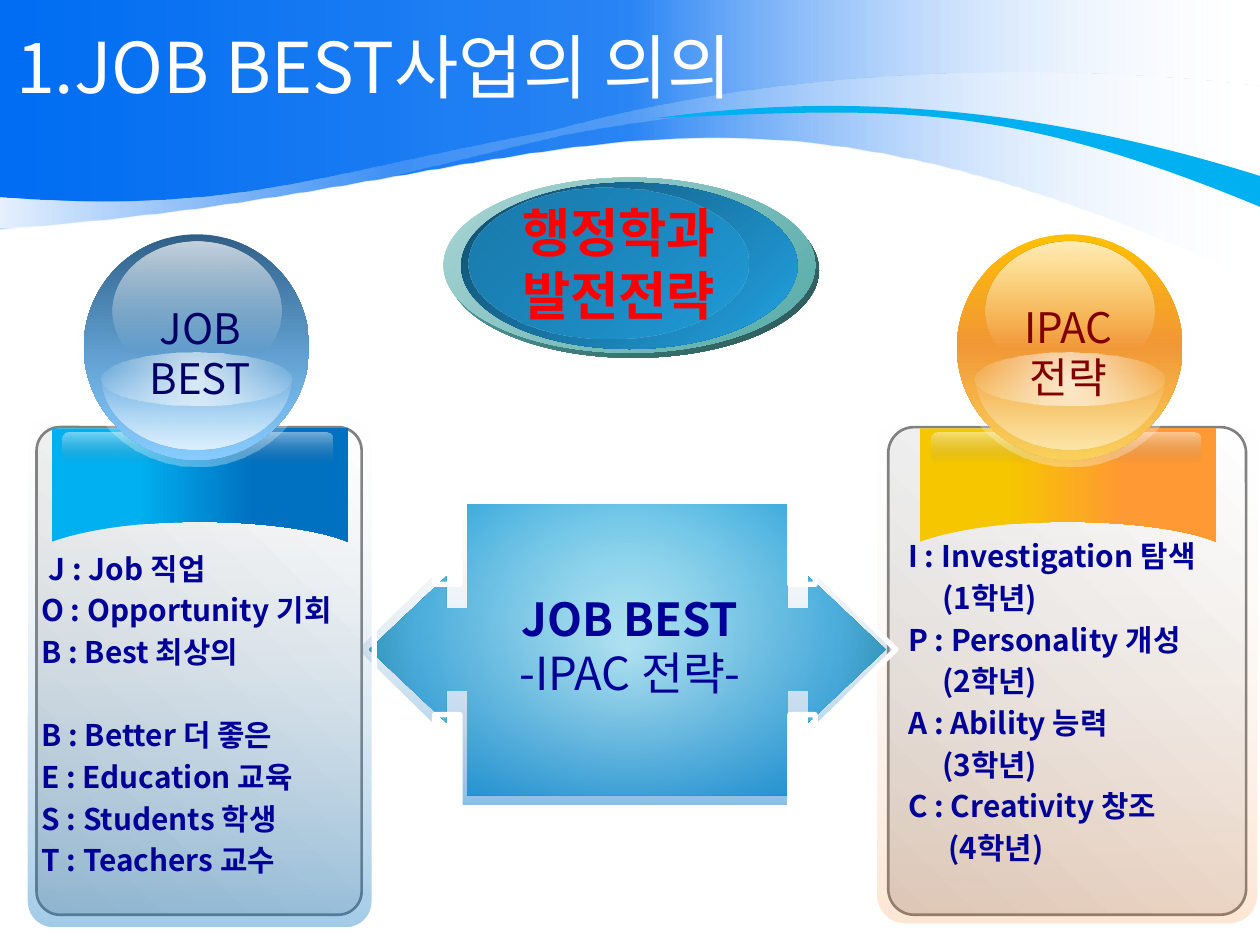
from lxml import etree
from pptx import Presentation
from pptx.dml.color import RGBColor
from pptx.enum.shapes import MSO_SHAPE
from pptx.enum.text import MSO_ANCHOR, MSO_AUTO_SIZE, PP_ALIGN
from pptx.oxml.ns import qn
from pptx.util import Inches, Pt

ELLIPSE, ROUNDED = MSO_SHAPE.OVAL, MSO_SHAPE.ROUNDED_RECTANGLE
CALLOUT = MSO_SHAPE.LEFT_RIGHT_ARROW_CALLOUT
LEFT, CENTER = PP_ALIGN.LEFT, PP_ALIGN.CENTER
TOP, MIDDLE = MSO_ANCHOR.TOP, MSO_ANCHOR.MIDDLE
FIT = MSO_AUTO_SIZE.SHAPE_TO_FIT_TEXT
FONT = "Noto Sans CJK KR"

WHITE = RGBColor(0xFF, 0xFF, 0xFF)
GREY = RGBColor(0x80, 0x80, 0x80)
SILVER = RGBColor(0xD9, 0xD9, 0xD9)
SHADE = RGBColor(0x76, 0x76, 0x76)
BLUE = RGBColor(0x00, 0x6D, 0xF2)
CYAN = RGBColor(0x00, 0xB0, 0xF0)
DEEP_BLUE = RGBColor(0x00, 0x70, 0xC0)
NAVY = RGBColor(0x00, 0x00, 0x99)
DARK_NAVY = RGBColor(0x00, 0x00, 0x66)
MAROON = RGBColor(0x80, 0x00, 0x00)
RED = RGBColor(0xFF, 0x00, 0x00)
TEAL = RGBColor(0x55, 0xAB, 0xA9)
DARK_TEAL = RGBColor(0x2A, 0x55, 0x54)
PALE_TEAL = RGBColor(0xAA, 0xD5, 0xD4)
SKY = RGBColor(0x22, 0xA2, 0xE2)
DARK_SKY = RGBColor(0x10, 0x4D, 0x6C)
MID_SKY = RGBColor(0x1A, 0x7C, 0xAE)

# Content: (text, left margin, first-line indent, space before in points)
HANG = (0.38, -0.38)
JOB_LINES = [
    ("J : Job 직업", 0.38, -0.32, 0),
    ("O : Opportunity 기회", *HANG, 3.4),
    ("B : Best 최상의", *HANG, 3.4),
    ("B : Better 더 좋은", *HANG, 27.2),
    ("E : Education 교육", *HANG, 3.4),
    ("S : Students 학생", *HANG, 3.4),
    ("T : Teachers 교수", *HANG, 3.4),
]
IPAC_LINES = [
    ("I : Investigation 탐색", *HANG, 0),
    ("(1학년)", 0.27, 0, 3.4),
    ("P : Personality 개성", *HANG, 3.4),
    ("(2학년)", 0.27, 0, 3.4),
    ("A : Ability 능력", *HANG, 3.4),
    ("(3학년)", 0.27, 0, 3.4),
    ("C : Creativity 창조", *HANG, 3.4),
    ("(4학년)", 0.32, 0, 3.4),
]

# Outlines: a pair is a line end, three pairs are a Bezier curve
HEADER_WAVE = [(10.01, 0), (-0.01, 0), (-0.01, 1.81),
               ((4.49, 1.5), (5.45, 0.14), (10.01, 2.24))]
HEADER_BAND = [(10.01, 0.69), ((9.55, 0.63), (6.92, 0.34), (4.4, 1.03)),
               ((2.42, 1.4), (1.86, 1.69), (0.01, 1.56)), (-0.01, 1.56), (-0.01, 1.81),
               ((2.03, 1.73), (2.66, 1.49), (4.48, 1.07)),
               ((5.43, 0.9), (7.46, 0.55), (10.01, 1.39))]
HEADER_STRIPE = [(5.18, 0.94), ((7.04, 0.86), (7.93, 0.78), (10.02, 1.65)), (10.01, 1.4),
                 ((7.75, 0.69), (6.17, 0.81), (5.18, 0.94))]

# Panels: boxes are (left, top, width, height)
RIGHT_PANEL = {
    "card": (7.05, 3.39, 2.84, 3.87), "glass": (6.94, 3.25, 3.06, 4.1),
    "tint": (RGBColor(0xF9, 0x6F, 0x07), 18), "ribbon_left": 7.3,
    "ribbon": [(29, RGBColor(0xF6, 0xC7, 0x00)), (69, RGBColor(0xFF, 0x99, 0x33))],
    "center": 8.49, "glow": 48,
    "ball": [(0, RGBColor(0xFF, 0xC0, 0x00)), (50, RGBColor(0xEF, 0x85, 0x11)),
             (100, RGBColor(0xF8, 0xBC, 0x14))],
}
LEFT_PANEL = {
    "card": (0.29, 3.39, 2.58, 3.87), "glass": (0.2, 3.28, 2.77, 4.1),
    "tint": (DEEP_BLUE, 37), "ribbon_left": 0.41,
    "ribbon": [(29, CYAN), (69, DEEP_BLUE)],
    "center": 1.56, "glow": 72,
    "ball": [(0, RGBColor(0x2E, 0x5E, 0x86)), (100, RGBColor(0x53, 0xB5, 0xFF))],
}

presentation = Presentation()
presentation.slide_width, presentation.slide_height = Inches(10), Inches(7.5)
slide = presentation.slides.add_slide(presentation.slide_layouts[6])


def paint(shape, stops, angle=90, line=None):
    """Fill with a colour or gradient stops (position, colour[, alpha]); angle None is radial."""
    shape.shadow.inherit = False
    if line:
        shape.line.color.rgb, shape.line.width = line[0], Pt(line[1])
    else:
        shape.line.fill.background()
    if isinstance(stops, RGBColor):
        shape.fill.solid()
        shape.fill.fore_color.rgb = stops
        return
    shape.fill.background()
    gradient = etree.Element(qn("a:gradFill"), rotWithShape="1")
    stop_list = etree.SubElement(gradient, qn("a:gsLst"))
    for position, color, *alpha in stops:
        stop = etree.SubElement(stop_list, qn("a:gs"), pos=str(position * 1000))
        color_node = etree.SubElement(stop, qn("a:srgbClr"), val=str(color))
        if alpha:
            etree.SubElement(color_node, qn("a:alpha"), val=str(alpha[0] * 1000))
    if angle is None:
        radial = etree.SubElement(gradient, qn("a:path"), path="circle")
        etree.SubElement(radial, qn("a:fillToRect"), l="50000", t="50000", r="50000", b="50000")
    else:
        etree.SubElement(gradient, qn("a:lin"), ang=str(angle * 60000), scaled="0")
    properties = shape._element.spPr
    properties.replace(properties.find(qn("a:noFill")), gradient)


def add_part(kind, box, stops, angle=90, line=None, adjust=()):
    shape = slide.shapes.add_shape(kind, *map(Inches, box))
    for index, value in enumerate(adjust):
        shape.adjustments[index] = value
    paint(shape, stops, angle, line)
    return shape


def add_outline(segments, stops, angle=0):
    """Draw a closed outline; the line ends of each curve are merged into one Bezier."""
    groups = [[part] if len(part) == 2 else list(part) for part in segments]
    corners = [(Inches(x), Inches(y)) for group in groups for x, y in group]
    builder = slide.shapes.build_freeform(*corners[0])
    builder.add_line_segments(corners[1:], close=True)
    shape = builder.convert_to_shape()
    lines = iter(list(shape._element.iter(qn("a:lnTo"))))
    for group in groups[1:]:
        ends = [next(lines) for _ in group]
        if len(ends) == 3:
            curve = etree.Element(qn("a:cubicBezTo"))
            ends[0].addprevious(curve)
            for end in ends:
                curve.append(end[0])
                end.getparent().remove(end)
    paint(shape, stops, angle)


def write(shape, lines, *, size, color, bold=(), align=CENTER, anchor=TOP, wrap=True, fit=True):
    """Write lines of text; bold holds the indices of the bold lines."""
    frame = shape.text_frame
    frame.word_wrap, frame.vertical_anchor = wrap, anchor
    if fit:
        frame.auto_size = FIT
    for index, line in enumerate(lines):
        text, margin, indent, before = (line, 0, 0, 0) if isinstance(line, str) else line
        paragraph = frame.paragraphs[0] if index == 0 else frame.add_paragraph()
        paragraph.alignment = align
        if before:
            paragraph.space_before = Pt(before)
        if margin:
            properties = paragraph._p.get_or_add_pPr()
            properties.set("marL", str(Inches(margin)))
            properties.set("indent", str(Inches(indent)))
        run = paragraph.add_run()
        run.text = text
        run.font.size, run.font.bold, run.font.name = Pt(size), index in bold, FONT
        run.font.color.rgb = color
        etree.SubElement(run._r.get_or_add_rPr(), qn("a:ea"), typeface=FONT)


def add_text(box, lines, **style):
    write(slide.shapes.add_textbox(*map(Inches, box)), lines, **style)


def add_panel(panel):
    # Card, tinted glass and ribbon
    add_part(ROUNDED, panel["card"], [(0, SILVER), (100, WHITE)], 315, (GREY, 1.5), [0.072])
    add_part(ROUNDED, panel["glass"], [(0, SILVER, 0), (100, *panel["tint"])],
             90, (WHITE, 3), [0.08])
    x = panel["ribbon_left"]
    add_outline([(x, 3.4), (x, 4.3), ((x + 0.68, 4.06), (x + 1.92, 4.12), (x + 2.35, 4.3)),
                 (x + 2.35, 3.4)], panel["ribbon"])
    add_part(ROUNDED, (x + 0.09, 3.43, 2.14, 0.24), [(0, WHITE, 45), (100, SHADE, 0)],
             adjust=[0.2])
    # Glossy ball: (top, width, height, stops, angle), all on one centre line
    for top, width, height, stops, angle in [
        (1.86, 1.79, 1.79, panel["ball"], 90),
        (2.42, 1.5, 1.15, [(0, WHITE, panel["glow"]), (54, WHITE, 0)], 270),
        (1.92, 1.34, 1.1, [(0, WHITE, 71), (78, WHITE, 0)], 90),
        (2.8, 1.51, 0.42, [(0, WHITE, 73), (100, WHITE, 6)], None),
        (1.8, 1.9, 1.9, [(0, WHITE, 0), (100, WHITE, 32)], 90),
    ]:
        add_part(ELLIPSE, (panel["center"] - width / 2, top, width, height), stops, angle)


# Header
add_outline(HEADER_WAVE, [(0, WHITE, 0), (50, BLUE, 83), (100, BLUE)], 180)
add_outline(HEADER_BAND, [(14, WHITE, 24), (69, WHITE, 16), (100, WHITE, 90)], 180)
add_outline(HEADER_STRIPE, CYAN)
add_panel(RIGHT_PANEL)
add_text((0.03, 0, 9.97, 1.04), ["1.JOB BEST사업의 의의"], size=40, color=WHITE,
         align=LEFT, anchor=MIDDLE, fit=False)

# Two-way arrow
add_part(CALLOUT, (2.93, 4, 4.1, 2.31),
         [(0, RGBColor(0xC2, 0xF3, 0xFA)), (71, RGBColor(0x41, 0xAE, 0xDF)),
          (100, RGBColor(0x14, 0x7F, 0x98))], None, adjust=[0.284, 0.25, 0.265, 0.619])
add_part(CALLOUT, (2.81, 3.9, 4.3, 2.51), [(0, SILVER, 0), (100, DEEP_BLUE, 46)], 90,
         (WHITE, 3), [0.412, 0.25, 0.255, 0.609])
add_text((3.44, 4.64, 3.12, 0.98), ["JOB BEST", "-IPAC 전략-"], size=26, color=NAVY, bold=[0])

# Left panel and panel texts
add_panel(LEFT_PANEL)
add_text((0.78, 2.35, 1.62, 0.91), ["JOB BEST"], size=24, color=DARK_NAVY)
add_text((7.67, 2.34, 1.62, 0.91), ["IPAC", "전략"], size=24, color=MAROON)
for box, lines in [((0.23, 4.32, 2.73, 2.79), JOB_LINES), ((7.11, 4.22, 2.73, 3.45), IPAC_LINES)]:
    add_text(box, lines, size=17, color=NAVY, bold=range(len(lines)), align=LEFT)

# Department badge
add_part(ELLIPSE, (3.55, 1.45, 2.95, 1.39), [(0, TEAL), (100, DARK_TEAL)], 45)
add_part(ELLIPSE, (3.52, 1.41, 2.95, 1.39), [(0, PALE_TEAL), (100, TEAL)], 45)
add_part(ELLIPSE, (3.66, 1.45, 2.67, 1.32), [(0, DARK_SKY), (100, SKY)], 45)
badge = add_part(ELLIPSE, (3.72, 1.49, 2.22, 1.2), [(0, MID_SKY), (100, SKY, 48)], 45)
write(badge, ["행정학과", "발전전략"], size=30, color=RED, bold=[0, 1], align=LEFT,
      anchor=MIDDLE, wrap=False, fit=False)

presentation.save("out.pptx")
